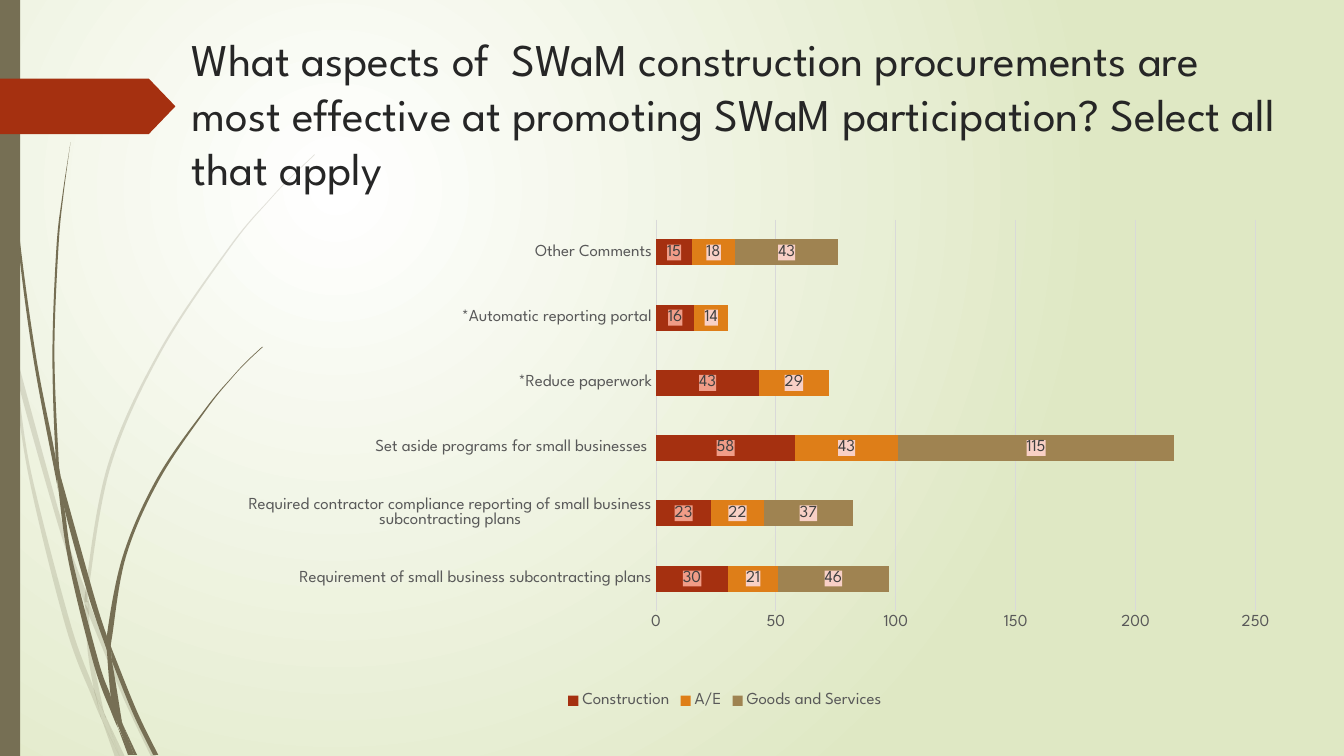
from dataclasses import dataclass

from lxml import etree
from pptx import Presentation, util as u
from pptx.chart.data import CategoryChartData
from pptx.dml.color import RGBColor
from pptx.enum import chart as charts, shapes, text
from pptx.oxml import parse_xml
from pptx.oxml.ns import nsdecls, qn


@dataclass(frozen=True)
class Theme:
    font: str = "League Spartan"
    title_size: float = 32.4
    chart_size: int = 12
    title: str = "262626"
    label: str = "404040"
    axis: str = "595959"
    grid: str = "D9D9D9"
    olive: str = "766F54"
    red: str = "A53010"
    orange: str = "DE7E18"
    tan: str = "9F8351"
    glow: str = "FFFFFF"
    green: str = "DFE8C4"
    red_label: str = "F09C87"
    pale_label: str = "F8D0C6"


theme = Theme()


def style(font, size, color):
    values = {"name": theme.font, "size": u.Pt(size), "bold": False}
    for name, value in values.items():
        setattr(font, name, value)
    font.color.rgb = RGBColor.from_string(color)


def curve(points):
    """Bezier points, three per span, of a smooth line after its first point."""
    ends = [points[0], *points, points[-1]]
    result = []
    for a, b, c, d in zip(ends, ends[1:], ends[2:], ends[3:]):
        result += [tuple(q + (r - p) / 6 for p, q, r in zip(a, b, c)),
                   tuple(r - (s - q) / 6 for q, r, s in zip(b, c, d)), c]
    return result


deck = Presentation()
deck.slide_width, deck.slide_height = u.Inches(13.33), u.Inches(7.5)
page = deck.slides.add_slide(deck.slide_layouts[5])

# Background: a round glow, upper left
backdrop = page.background.fill
backdrop.gradient()
for stop, color, position in zip(backdrop.gradient_stops, (theme.glow, theme.green), (0, 1)):
    stop.color.rgb = RGBColor.from_string(color)
    stop.position = position
gradient = page.element.find(".//" + qn("a:gradFill"))
gradient.replace(gradient.find(qn("a:lin")), parse_xml(
    f'<a:path {nsdecls("a")} path="circle">'
    '<a:fillToRect l="50000" t="50000" r="100000" b="100000"/></a:path>'))

# Grass: each piece has two edges, both from its first end to its last
pale_grass = [
    ([(0, 2.82), (.09, 3.22), (.11, 3.5)], [(0, 2.99), (.1, 3.44), (.11, 3.5)]),
    ([(.14, 3.45), (.17, 3.76), (.58, 5.22), (.84, 5.99)],
     [(.14, 3.45), (.62, 5.2), (.85, 5.86)]),
    ([(.88, 5.96), (.92, 6.07), (1.27, 6.92), (1.55, 7.51)],
     [(.88, 6.1), (1.23, 6.94), (1.5, 7.51)]),
    ([(1.05, 7.11), (1.19, 7.51)], [(1.05, 7.11), (1.24, 7.51)]),
    ([(.11, 3.5), (.17, 3.76), (.31, 4.69), (.7, 6.19), (.93, 6.83), (.99, 7.07), (1.01, 7.14)],
     [(.11, 3.5), (.28, 4.7), (.65, 6.21), (.92, 6.93), (1.01, 7.14)]),
    ([(.84, 5.99), (.87, 6.46), (.93, 6.83), (.96, 6.92), (1.05, 7.11)],
     [(.84, 5.99), (.88, 6.08), (.91, 6.46), (1.03, 7.06), (1.05, 7.11)]),
    ([(3.12, 1.53), (2.89, 1.75), (2.68, 1.97), (2.28, 2.44), (1.58, 3.48), (1.07, 4.61),
      (.85, 5.84), (.88, 5.96)],
     [(3.12, 1.54), (2.9, 1.75), (2.68, 1.98), (2.29, 2.45), (1.6, 3.49), (1.1, 4.62),
      (.88, 5.84), (.88, 5.96)]),
    ([(1.01, 7.14), (1.14, 7.51)], [(1.01, 7.14), (1.19, 7.51)]),
    ([(.85, 5.86), (.84, 5.99), (.88, 6.1)], [(.85, 5.86), (.88, 5.96), (.88, 6.1)]),
    ([(.93, 6.83), (.99, 7.07), (1.01, 7.14), (1.19, 7.51)],
     [(.93, 6.83), (.96, 6.92), (1.05, 7.11), (1.19, 7.51)]),
]
dark_grass = [
    ([(.03, 0), (.04, .48), (.07, 1.1), (.17, 2.33), (.33, 3.55), (.56, 4.77), (.57, 4.81)],
     [(.04, 0), (.05, .48), (.08, 1.09), (.19, 2.32), (.36, 3.55), (.55, 4.53), (.57, 4.81)]),
    ([(.6, 4.72), (.64, 5.05), (.88, 5.92), (1.06, 6.45)],
     [(.6, 4.72), (.93, 5.9), (1.06, 6.31)]),
    ([(1.1, 6.41), (1.13, 6.49), (1.36, 7.06), (1.57, 7.49)],
     [(1.11, 6.56), (1.32, 7.08), (1.52, 7.49)]),
    ([(.57, 4.77), (.64, 5.05), (.72, 5.56), (.98, 6.57), (1.1, 6.91), (1.16, 7.17), (1.17, 7.22)],
     [(.57, 4.77), (.68, 5.57), (.93, 6.59), (1.11, 7.08), (1.17, 7.22)]),
    ([(.7, 1.41), (.62, 1.93), (.56, 2.45), (.52, 3.49), (.55, 4.49), (.6, 4.72)],
     [(.7, 1.41), (.63, 1.93), (.58, 2.45), (.54, 3.49), (.58, 4.53), (.6, 4.72)]),
    ([(1.22, 7.19), (1.33, 7.49)], [(1.22, 7.19), (1.36, 7.49)]),
    ([(.55, 4.49), (.57, 4.77), (.64, 5.05)], [(.55, 4.49), (.6, 4.72), (.64, 5.05)]),
    ([(2.6, 3.44), (2.45, 3.58), (2.31, 3.73), (2.04, 4.05), (1.56, 4.74), (1.22, 5.51),
      (1.06, 6.31), (1.1, 6.41)],
     [(2.61, 3.44), (2.45, 3.59), (2.31, 3.74), (2.05, 4.06), (1.58, 4.76), (1.25, 5.52),
      (1.11, 6.33), (1.1, 6.41)]),
    ([(1.17, 7.22), (1.27, 7.49)], [(1.17, 7.22), (1.31, 7.49)]),
    ([(1.06, 6.45), (1.1, 6.91), (1.16, 7.06), (1.22, 7.19)],
     [(1.06, 6.45), (1.11, 6.56), (1.21, 7.16), (1.22, 7.19)]),
    ([(1.06, 6.31), (1.06, 6.45), (1.11, 6.56)], [(1.06, 6.31), (1.1, 6.41), (1.11, 6.56)]),
    ([(1.1, 6.91), (1.16, 7.17), (1.3, 7.49)], [(1.1, 6.91), (1.22, 7.19), (1.33, 7.49)]),
]
decor = []
for pieces, opacity in ((pale_grass, 20), (dark_grass, 100)):
    for near, far in pieces:
        join = [near[-1], far[-1], far[-1]] if near[-1] != far[-1] else []
        outline = [near[0]] + curve(near) + join + curve(far[::-1])
        outline = [(u.Inches(x), u.Inches(y)) for x, y in outline]
        builder = page.shapes.build_freeform(*outline[0])
        builder.add_line_segments(outline[1:], close=True)
        blade = builder.convert_to_shape()
        lines = list(blade.element.iter(qn("a:lnTo")))
        for first, second, third in zip(lines[::3], lines[1::3], lines[2::3]):
            bend = etree.Element(qn("a:cubicBezTo"))
            first.addprevious(bend)
            for line in (first, second, third):
                bend.append(line[0])
                line.getparent().remove(line)
        decor.append((blade, theme.olive, opacity))

# Side bar and arrow tab
bar = page.shapes.add_shape(shapes.MSO_SHAPE.RECTANGLE, 0, 0, u.Inches(0.2), deck.slide_height)
tab = page.shapes.add_shape(shapes.MSO_SHAPE.PENTAGON, 0, u.Inches(0.78),
                            u.Inches(1.74), u.Inches(0.55))
tab.adjustments[0] = 0.48
decor += [(bar, theme.olive, 100), (tab, theme.red, 100)]
for shape, color, opacity in decor:
    shape.shadow.inherit = False
    shape.line.fill.background()
    shape.fill.solid()
    shape.fill.fore_color.rgb = RGBColor.from_string(color)
    if opacity < 100:
        paint = shape.element.spPr.find(qn("a:solidFill"))[0]
        etree.SubElement(paint, qn("a:alpha"), val=str(opacity * 1000))

# Title, in front of the grass
title = page.shapes.title
title.element.getparent().append(title.element)
title.left, title.top, title.width, title.height = map(u.Inches, (1.8, 0.26, 11.12, 1.4))
frame = title.text_frame
for name, value in {"word_wrap": True, "auto_size": text.MSO_AUTO_SIZE.NONE,
                    "vertical_anchor": text.MSO_ANCHOR.TOP}.items():
    setattr(frame, name, value)
para = frame.paragraphs[0]
para.alignment = text.PP_ALIGN.LEFT
span = para.add_run()
span.text = ("What aspects of\u00a0 SWaM construction procurements are most effective "
             "at promoting SWaM participation? Select all that apply")
style(span.font, theme.title_size, theme.title)

# Stacked bar chart
data = CategoryChartData()
data.categories = [
    "Requirement of small business subcontracting plans",
    "Required contractor compliance reporting of small business subcontracting plans",
    "Set aside programs for small businesses\u00a0",
    "*Reduce paperwork", "*Automatic reporting portal", "Other Comments"]
answers = [
    ("Construction", (30, 23, 58, 43, 16, 15), theme.red, theme.red_label),
    ("A/E", (21, 22, 43, 29, 14, 18), theme.orange, theme.pale_label),
    ("Goods and Services", (46, 37, 115, None, None, 43), theme.tan, theme.pale_label)]
for name, values, *_ in answers:
    data.add_series(name, values)
chart = page.shapes.add_chart(charts.XL_CHART_TYPE.BAR_STACKED,
                              *map(u.Inches, (1.59, 1.29, 11.2, 5.78)), data).chart
style(chart.font, theme.chart_size, theme.axis)
chart.has_title = False
plot = chart.plots[0]
plot.gap_width, plot.overlap, plot.vary_by_categories = 150, 100, False
for series, (_, _, color, label_color) in zip(plot.series, answers):
    series.format.fill.solid()
    series.format.fill.fore_color.rgb = RGBColor.from_string(color)
    labels = series.data_labels
    labels.show_value = True
    labels.position = charts.XL_LABEL_POSITION.CENTER
    style(labels.font, theme.chart_size, theme.label)
    text_part = series._element.find(qn("c:dLbls")).find(qn("c:txPr"))
    text_part.addprevious(parse_xml(
        f'<c:spPr {nsdecls("c", "a")}><a:solidFill><a:srgbClr val="{label_color}"/>'
        '</a:solidFill></c:spPr>'))

# Axes, grid and legend
amounts = chart.value_axis
for axis in (chart.category_axis, amounts):
    axis.major_tick_mark = axis.minor_tick_mark = charts.XL_TICK_MARK.NONE
    style(axis.tick_labels.font, theme.chart_size, theme.axis)
amounts.format.line.fill.background()
for line in (chart.category_axis.format.line, amounts.major_gridlines.format.line):
    line.color.rgb = RGBColor.from_string(theme.grid)
    line.width = u.Pt(0.75)
chart.has_legend = True
chart.legend.position = charts.XL_LEGEND_POSITION.BOTTOM
chart.legend.include_in_layout = False
style(chart.legend.font, theme.chart_size, theme.axis)

# Fixed plot area, in percent of the chart
area = chart._chartSpace.find(".//" + qn("c:plotArea"))
for old in area.findall(qn("c:layout")):
    area.remove(old)
layout = parse_xml(
    f'<c:layout {nsdecls("c")}><c:manualLayout><c:layoutTarget val="inner"/>'
    '<c:xMode val="edge"/><c:yMode val="edge"/></c:manualLayout></c:layout>')
for name, percent in {"x": 43.9, "y": 15.4, "w": 53.1, "h": 67.2}.items():
    etree.SubElement(layout[0], qn("c:" + name), val=str(percent / 100))
area.insert(0, layout)

deck.save("out.pptx")
